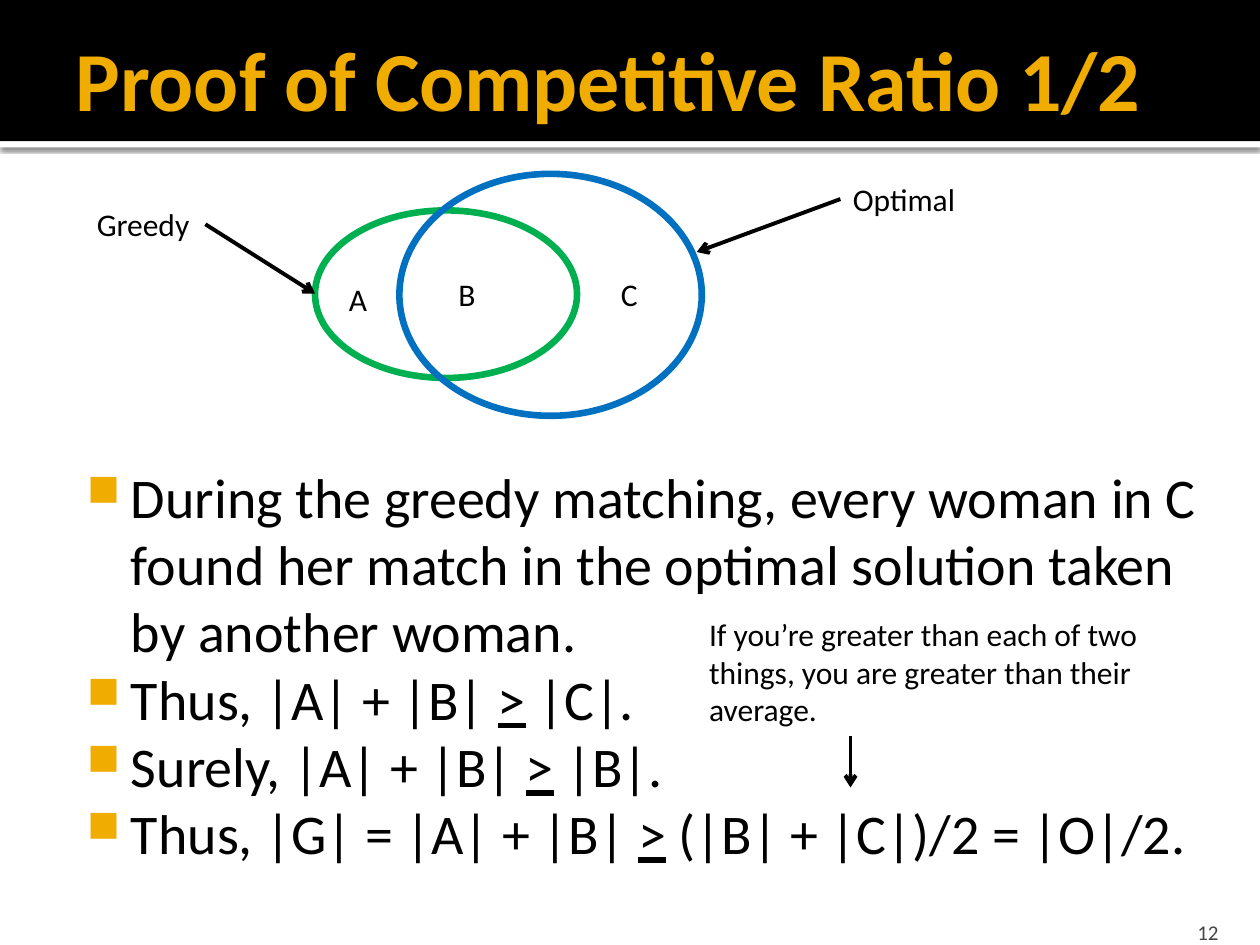
from pptx import Presentation
from pptx.dml.color import RGBColor
from pptx.enum.shapes import MSO_CONNECTOR as CONNECTOR, MSO_SHAPE as SHAPE
from pptx.enum.text import MSO_ANCHOR as ANCHOR, PP_ALIGN as ALIGN
from pptx.oxml import parse_xml
from pptx.oxml.ns import nsdecls
from pptx.util import Inches, Pt

BLACK = RGBColor(0x00, 0x00, 0x00)
WHITE = RGBColor(0xFF, 0xFF, 0xFF)
GOLD = RGBColor(0xF0, 0xAD, 0x00)
GREEN = RGBColor(0x00, 0xB0, 0x50)
BLUE = RGBColor(0x00, 0x70, 0xC0)
GRAY = RGBColor(0x45, 0x45, 0x45)


class SlideBuilder:
    font_name = "Calibri"
    label_size = 18
    body_size = 32

    def __init__(self, slide):
        self.slide = slide

    def xml(self, markup):
        tag, rest = markup[1:].split(">", 1)
        return parse_xml(f"<{tag} {nsdecls('a')}>{rest}")

    def style(self, run, size, color, bold=False):
        run.font.name = self.font_name
        run.font.size = Pt(size)
        run.font.color.rgb = color
        run.font.bold = bold

    def band(self, top, height, color, shadow=False):
        shape = self.slide.shapes.add_shape(
            SHAPE.RECTANGLE, 0, Inches(top), Inches(10), Inches(height))
        shape.shadow.inherit = False
        shape.fill.solid()
        shape.fill.fore_color.rgb = color
        shape.line.fill.background()
        if shadow:
            effects = shape._element.spPr.find(
                "{http://schemas.openxmlformats.org/drawingml/2006/main}effectLst")
            outer = self.xml('<a:outerShdw><a:srgbClr val="000000">'
                             '<a:alpha val="60000"/></a:srgbClr></a:outerShdw>')
            for name, value in (("blurRad", Pt(2.5)), ("dist", Pt(0.8)),
                                ("dir", 90 * 60000)):
                outer.set(name, str(int(value)))
            effects.append(outer)

    def ellipse(self, left, top, width, height, color):
        shape = self.slide.shapes.add_shape(
            SHAPE.OVAL, Inches(left), Inches(top), Inches(width), Inches(height))
        shape.shadow.inherit = False
        shape.fill.background()
        shape.line.color.rgb = color
        shape.line.width = Pt(3.78)

    def arrow(self, start, end):
        points = [Inches(value) for value in (*start, *end)]
        connector = self.slide.shapes.add_connector(CONNECTOR.STRAIGHT, *points)
        connector.line.color.rgb = BLACK
        connector.line.width = Pt(2.25)
        connector.line._get_or_add_ln().append(self.xml('<a:tailEnd></a:tailEnd>'))
        connector.line._ln[-1].set("type", "arrow")
        connector._element.spPr.append(self.xml("<a:effectLst></a:effectLst>"))

    def frame(self, left, top, width, height, insets=(0.1, 0.05, 0.1, 0.05),
              anchor=ANCHOR.TOP, wrap=True):
        box = self.slide.shapes.add_textbox(
            Inches(left), Inches(top), Inches(width), Inches(height))
        text_frame = box.text_frame
        text_frame.word_wrap = wrap
        text_frame.vertical_anchor = anchor
        (text_frame.margin_left, text_frame.margin_top, text_frame.margin_right,
         text_frame.margin_bottom) = [Inches(inset) for inset in insets]
        return text_frame

    def text(self, text, place, size=label_size, color=BLACK, bold=False,
             align=ALIGN.LEFT, **options):
        text_frame = self.frame(*place, **options)
        text_frame.text = text
        for paragraph in text_frame.paragraphs:
            paragraph.alignment = align
            for run in paragraph.runs:
                self.style(run, size, color, bold)

    def bullets(self, items, place, insets):
        text_frame = self.frame(*place, insets=insets)
        for index, parts in enumerate(items):
            paragraph = (text_frame.add_paragraph() if index
                         else text_frame.paragraphs[0])
            properties = paragraph._p.get_or_add_pPr()
            properties.set("marL", str(Inches(0.48)))
            properties.set("indent", str(Inches(-0.35)))
            for markup in (f'<a:buClr><a:srgbClr val="{GOLD}"/></a:buClr>',
                           '<a:buSzPct><!-- --></a:buSzPct>',
                           '<a:buChar></a:buChar>'):
                properties.append(self.xml(markup.replace("<!-- -->", "")))
            properties[-2].set("val", "80000")
            properties[-1].set("char", "■")
            for part in parts:
                run = paragraph.add_run()
                run.text = part
                self.style(run, self.body_size, BLACK)
                run.font.underline = part == ">"


def main():
    presentation = Presentation()
    presentation.slide_width = Inches(10)
    presentation.slide_height = Inches(7.5)
    builder = SlideBuilder(
        presentation.slides.add_slide(presentation.slide_layouts[6]))

    builder.band(1.12, 0.05, WHITE, shadow=True)
    builder.band(0, 1.12, BLACK)
    builder.text("Proof of Competitive Ratio 1/2", (0.5, 0.08, 9.5, 1.08),
                 size=48, color=GOLD, bold=True, anchor=ANCHOR.MIDDLE,
                 insets=(0.1, 0.05, 0.05, 0.05))

    builder.bullets(
        [("During the greedy matching, every woman in C found her match "
          "in the optimal solution taken by another woman.",),
         ("Thus, |A| + |B| ", ">", " |C|."),
         ("Surely, |A| + |B| ", ">", " |B|."),
         ("Thus, |G| = |A| + |B| ", ">", " (|B| + |C|)/2 = |O|/2.")],
        (0.5, 3.57, 9.33, 3.6), insets=(0.06, 0.1, 0.1, 0.05))

    builder.ellipse(2.5, 1.67, 2.08, 1.33, GREEN)
    builder.ellipse(3.17, 1.38, 2.4, 1.92, BLUE)

    for label, place in (
            ("A", (2.67, 2.17, 0.36, 0.4)),
            ("B", (3.54, 2.13, 0.35, 0.4)),
            ("C", (4.83, 2.13, 0.35, 0.4)),
            ("Optimal", (6.67, 1.38, 1.06, 0.4)),
            ("Greedy", (0.67, 1.58, 0.96, 0.4)),
            ("If you’re greater than each of two\n"
             "things, you are greater than their\naverage.",
             (5.53, 4.83, 3.66, 1.01))):
        builder.text(label, place, wrap=False)

    for start, end in (((6.75, 5.84), (6.75, 6.25)),
                       ((6.67, 1.58), (5.53, 2)),
                       ((1.63, 1.78), (2.5, 2.33))):
        builder.arrow(start, end)

    builder.text("12", (8.97, 7.2, 0.8, 0.3), size=12, color=GRAY,
                 align=ALIGN.RIGHT, anchor=ANCHOR.BOTTOM,
                 insets=(0.1, 0.05, 0.1, 0))

    presentation.save("out.pptx")


if __name__ == "__main__":
    main()
